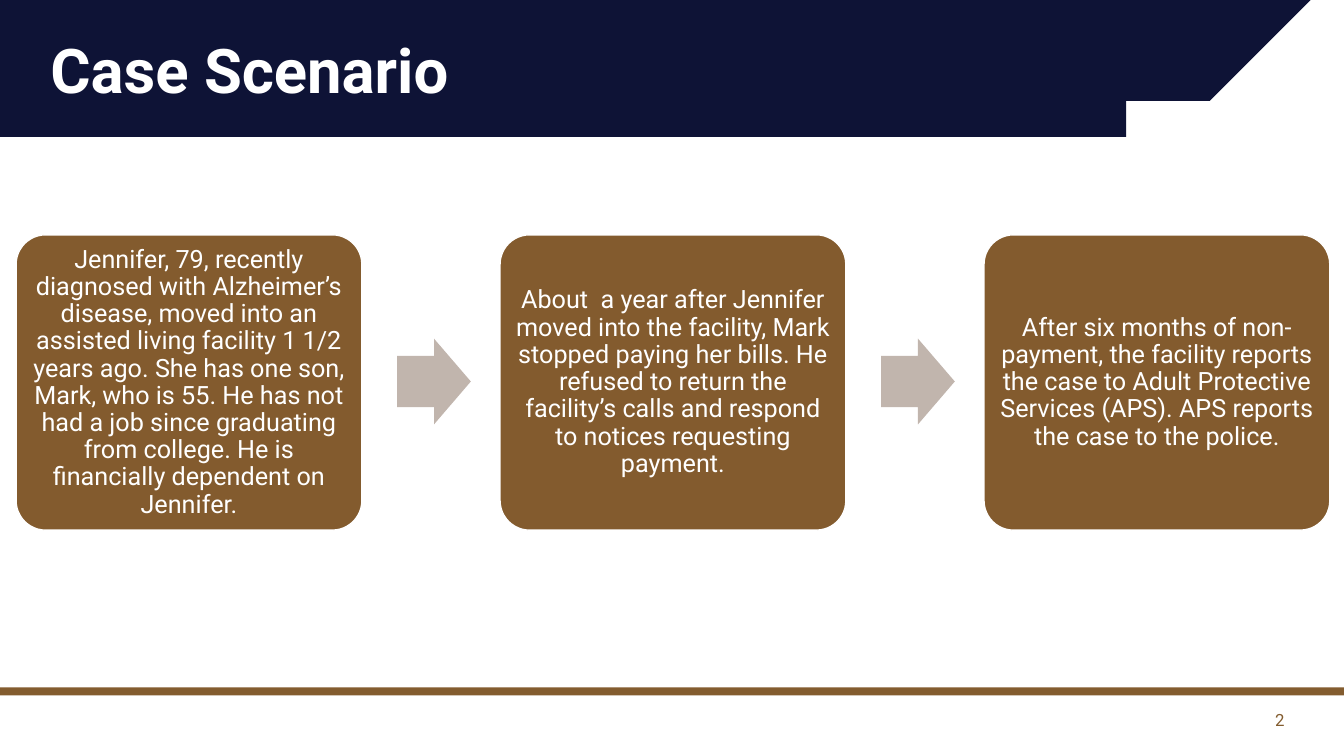
from pptx import Presentation
from pptx.dml.color import RGBColor
from pptx.enum.shapes import MSO_SHAPE as Kind
from pptx.enum.text import MSO_ANCHOR as Anchor, MSO_AUTO_SIZE as Fit, PP_ALIGN as Align
from pptx.util import Inches, Pt

COLORS = {"navy": "0E1336", "brown": "835C2F", "card": "835B2E",
          "arrow": "C1B5AD", "white": "FFFFFF"}
FONT = "Roboto"
STEPS = [
    "Jennifer, 79, recently diagnosed with Alzheimer’s disease, moved into an "
    "assisted living facility 1 1/2 years ago. She has one son, Mark, who is 55. "
    "He has not had a job since graduating from college. He is financially "
    "dependent on Jennifer.",
    "About  a year after Jennifer moved into the facility, Mark stopped paying "
    "her bills. He refused to return the facility’s calls and respond to notices "
    "requesting payment.",
    "After six months of non-payment, the facility reports the case to Adult "
    "Protective Services (APS). APS reports the case to the police.",
]
LEFT, PITCH = 0.16, 4.8


def color(name):
    return RGBColor.from_string(COLORS[name])


def paint(shape, fill, line=None):
    shape.shadow.inherit = False
    shape.fill.solid()
    shape.fill.fore_color.rgb = color(fill)
    if line:
        shape.line.color.rgb = color(line)
        shape.line.width = Pt(1)
    else:
        shape.line.fill.background()


def add_block(slide, kind, box, fill, line=None, adjust=()):
    shape = slide.shapes.add_shape(kind, *map(Inches, box))
    for i, value in enumerate(adjust):
        shape.adjustments[i] = value
    paint(shape, fill, line)
    return shape


def write(shape, text, size, tint, align, anchor, inset, spacing=None, bold=False):
    frame = shape.text_frame
    form = {"word_wrap": True, "auto_size": Fit.NONE, "vertical_anchor": anchor}
    for side in ("left", "right", "top", "bottom"):
        form["margin_" + side] = Inches(inset)
    for key, value in form.items():
        setattr(frame, key, value)
    frame.text = text
    para = frame.paragraphs[0]
    para.alignment = align
    para.line_spacing = spacing
    for key, value in {"name": FONT, "size": Pt(size), "bold": bold}.items():
        setattr(para.font, key, value)
    para.font.color.rgb = color(tint)


def bend(points, count=12):
    """Return points along a cubic Bezier curve, without its start."""
    curve = []
    for i in range(1, count + 1):
        t = i / count
        parts = ((1 - t) ** 3, 3 * t * (1 - t) ** 2, 3 * t * t * (1 - t), t ** 3)
        curve.append(tuple(sum(w * p[k] for w, p in zip(parts, points)) for k in (0, 1)))
    return curve


def add_banner(slide):
    corner = bend([(11.68, 1.37), (11.82, 1.37), (11.83, 1.38), (12, 1.2)])
    path = slide.shapes.build_freeform(11.14, 0, scale=Inches(1))
    path.add_line_segments([(11.14, 1.36), (11.68, 1.37), *corner, (13.07, 0)])
    paint(path.convert_to_shape(), "navy")
    add_block(slide, Kind.RECTANGLE, (0, 0, 11.17, 1.36), "navy")


def add_title(slide, text):
    title = slide.shapes.title
    title.element.getparent().append(title.element)  # in front of the banner
    box = {"left": 0.45, "top": 0.35, "width": 12.39, "height": 1.12}
    for key, value in box.items():
        setattr(title, key, Inches(value))
    write(title, text, 44, "white", Align.LEFT, Anchor.TOP, 0.05, 0.9, True)


def add_footer(slide, number):
    add_block(slide, Kind.RECTANGLE, (0, 6.82, 13.33, 0.08), "brown")
    box = slide.shapes.add_textbox(*map(Inches, (12.54, 7, 0.3, 0.29)))
    write(box, number, 12, "brown", Align.RIGHT, Anchor.MIDDLE, 0.1)
    box.text_frame.word_wrap = False


def add_flow(slide, steps):
    for i, text in enumerate(steps):
        x = LEFT + i * PITCH
        if i:
            add_block(slide, Kind.RIGHT_ARROW, (x - 1.02, 3.36, 0.73, 0.85),
                      "arrow", adjust=(0.6, 0.5))
        card = add_block(slide, Kind.ROUNDED_RECTANGLE, (x, 2.33, 3.43, 2.93),
                         "card", "white", (0.1,))
        write(card, text, 18, "white", Align.CENTER, Anchor.MIDDLE, 0.07, 0.9)


def main():
    deck = Presentation()
    deck.slide_width, deck.slide_height = Inches(13.33), Inches(7.5)
    slide = deck.slides.add_slide(deck.slide_layouts[5])
    add_banner(slide)
    add_title(slide, "Case Scenario")
    add_flow(slide, STEPS)
    add_footer(slide, "2")
    deck.save("out.pptx")


if __name__ == "__main__":
    main()
